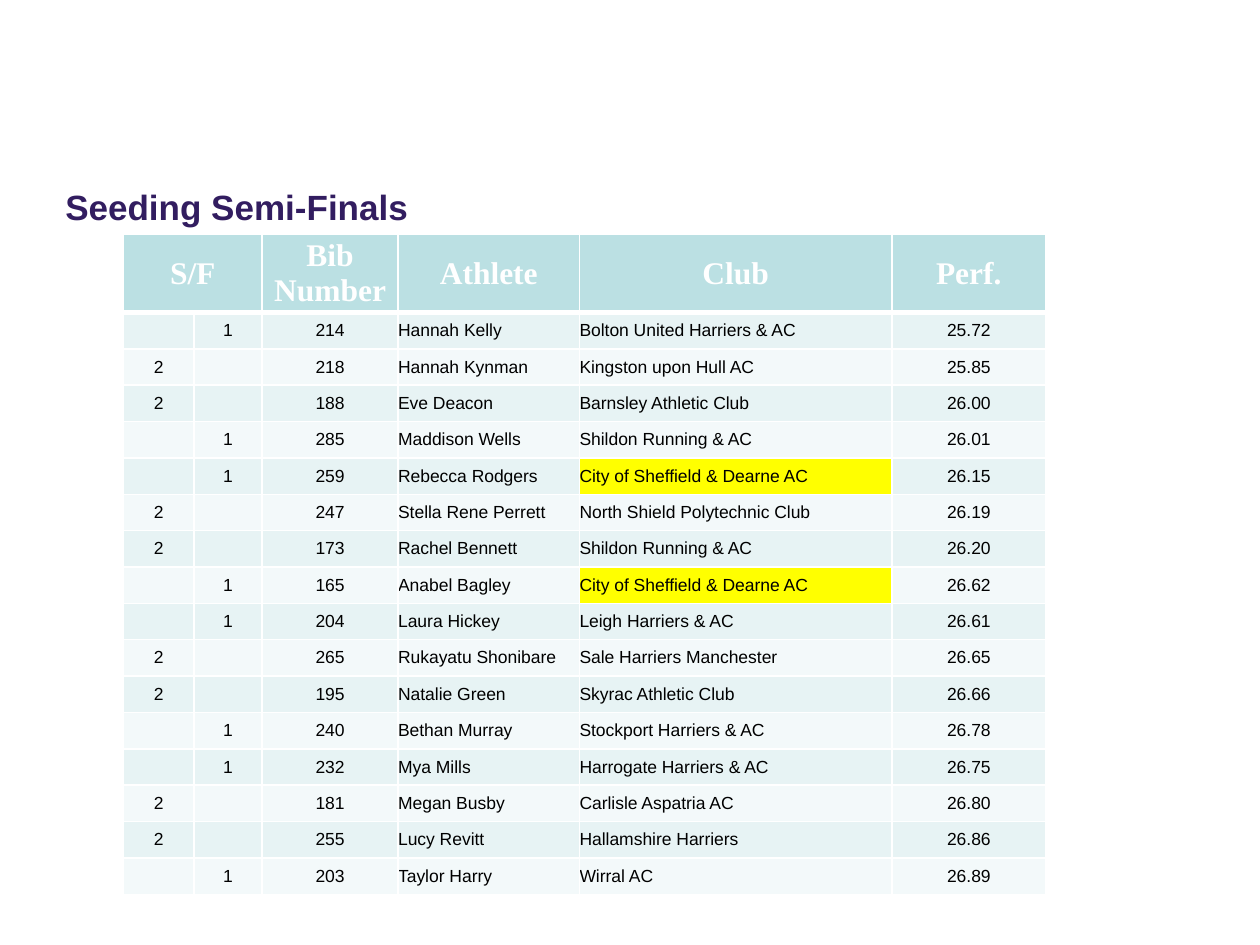
"""Build the semi-final seeding slide with its table of athletes."""
from lxml.etree import SubElement
from pptx import Presentation
from pptx.dml.color import RGBColor
from pptx.enum.text import MSO_ANCHOR, PP_ALIGN
from pptx.oxml.ns import qn
from pptx.util import Inches, Pt

TITLE = "Seeding Semi-Finals"
HEADINGS = ["S/F", "", "Bib Number", "Athlete", "Club", "Perf."]
SEEDS = [
    (1, "214", "Hannah Kelly", "Bolton United Harriers & AC", "25.72"),
    (2, "218", "Hannah Kynman", "Kingston upon Hull AC", "25.85"),
    (2, "188", "Eve Deacon", "Barnsley Athletic Club", "26.00"),
    (1, "285", "Maddison Wells", "Shildon Running & AC", "26.01"),
    (1, "259", "Rebecca Rodgers", "City of Sheffield & Dearne AC", "26.15"),
    (2, "247", "Stella Rene Perrett", "North Shield Polytechnic Club", "26.19"),
    (2, "173", "Rachel Bennett", "Shildon Running & AC", "26.20"),
    (1, "165", "Anabel Bagley", "City of Sheffield & Dearne AC", "26.62"),
    (1, "204", "Laura Hickey", "Leigh Harriers & AC", "26.61"),
    (2, "265", "Rukayatu Shonibare", "Sale Harriers Manchester", "26.65"),
    (2, "195", "Natalie Green", "Skyrac Athletic Club", "26.66"),
    (1, "240", "Bethan Murray", "Stockport Harriers & AC", "26.78"),
    (1, "232", "Mya Mills", "Harrogate Harriers & AC", "26.75"),
    (2, "181", "Megan Busby", "Carlisle Aspatria AC", "26.80"),
    (2, "255", "Lucy Revitt", "Hallamshire Harriers", "26.86"),
    (1, "203", "Taylor Harry", "Wirral AC", "26.89"),
]
HIGHLIGHTED_CLUB = "City of Sheffield & Dearne AC"
COLORS = {
    "title": "321D60", "header": "BBE0E3", "odd": "E7F3F4", "even": "F3F9FA",
    "highlight": "FFFF00", "white": "FFFFFF", "black": "000000",
}
COLUMN_WIDTHS = [0.56, 0.54, 1.08, 1.44, 2.48, 1.22]
LEFT_ALIGNED = (3, 4)
HEADER_HEIGHT, SEEDS_HEIGHT = 0.57, 4.62


def add_text(paragraph, text, font, size, color, bold=False):
    run = paragraph.add_run()
    run.text = text
    run.font.name, run.font.size, run.font.bold = font, Pt(size), bold
    run.font.color.rgb = RGBColor.from_string(COLORS[color])


def add_borders(cell, bottom_width):
    properties = cell._tc.get_or_add_tcPr()
    for index, (side, width) in enumerate(
            [("L", 1), ("R", 1), ("T", 1), ("B", bottom_width)]):
        line = properties.makeelement(qn(f"a:ln{side}"), {"w": str(Pt(width))})
        fill = SubElement(line, qn("a:solidFill"))
        SubElement(fill, qn("a:srgbClr"), val=COLORS["white"])
        properties.insert(index, line)


def style_cell(cell, text, fill, align, inset, font, size, color, bold, bottom_width):
    cell.fill.solid()
    cell.fill.fore_color.rgb = RGBColor.from_string(COLORS[fill])
    cell.vertical_anchor = MSO_ANCHOR.MIDDLE
    cell.margin_left = cell.margin_right = Inches(inset)
    cell.margin_top = cell.margin_bottom = Inches(inset)
    paragraph = cell.text_frame.paragraphs[0]
    paragraph.alignment = align
    if text:
        add_text(paragraph, text, font, size, color, bold)
    else:
        SubElement(paragraph._p, qn("a:endParaRPr"), sz=str(size * 100))
    add_borders(cell, bottom_width)


def add_title(slide):
    title = slide.shapes.add_textbox(
        Inches(0.42), Inches(1.42), Inches(6.67), Inches(0.58)).text_frame
    title.word_wrap = True
    add_text(title.paragraphs[0], TITLE, "Arial", 20, "title", True)


def add_seeding_table(slide):
    seeding = slide.shapes.add_table(
        len(SEEDS) + 1, len(HEADINGS), Inches(0.98), Inches(1.86),
        Inches(sum(COLUMN_WIDTHS)), Inches(HEADER_HEIGHT + SEEDS_HEIGHT)).table
    for column, width in zip(seeding.columns, COLUMN_WIDTHS):
        column.width = Inches(width)
    for index, row in enumerate(seeding.rows):
        row.height = Inches(SEEDS_HEIGHT / len(SEEDS) if index else HEADER_HEIGHT)

    for column, heading in enumerate(HEADINGS):
        style_cell(seeding.cell(0, column), heading, "header", PP_ALIGN.CENTER,
                   0.01, "Times New Roman", 18, "white", True, 3)
    seeding.cell(0, 0).merge(seeding.cell(0, 1))

    for row, (semi_final, bib, athlete, club, performance) in enumerate(SEEDS, 1):
        heats = ["2", ""] if semi_final == 2 else ["", "1"]
        band = "odd" if row % 2 else "even"
        for column, value in enumerate([*heats, bib, athlete, club, performance]):
            style_cell(
                seeding.cell(row, column), value,
                "highlight" if value == HIGHLIGHTED_CLUB else band,
                PP_ALIGN.LEFT if column in LEFT_ALIGNED else PP_ALIGN.CENTER,
                0.01 if column < 2 else 0, "Arial", 10, "black", False, 1)


def main():
    presentation = Presentation()
    presentation.slide_width, presentation.slide_height = Inches(10), Inches(7.5)
    slide = presentation.slides.add_slide(presentation.slide_layouts[6])
    add_title(slide)
    add_seeding_table(slide)
    presentation.save("out.pptx")


if __name__ == "__main__":
    main()
